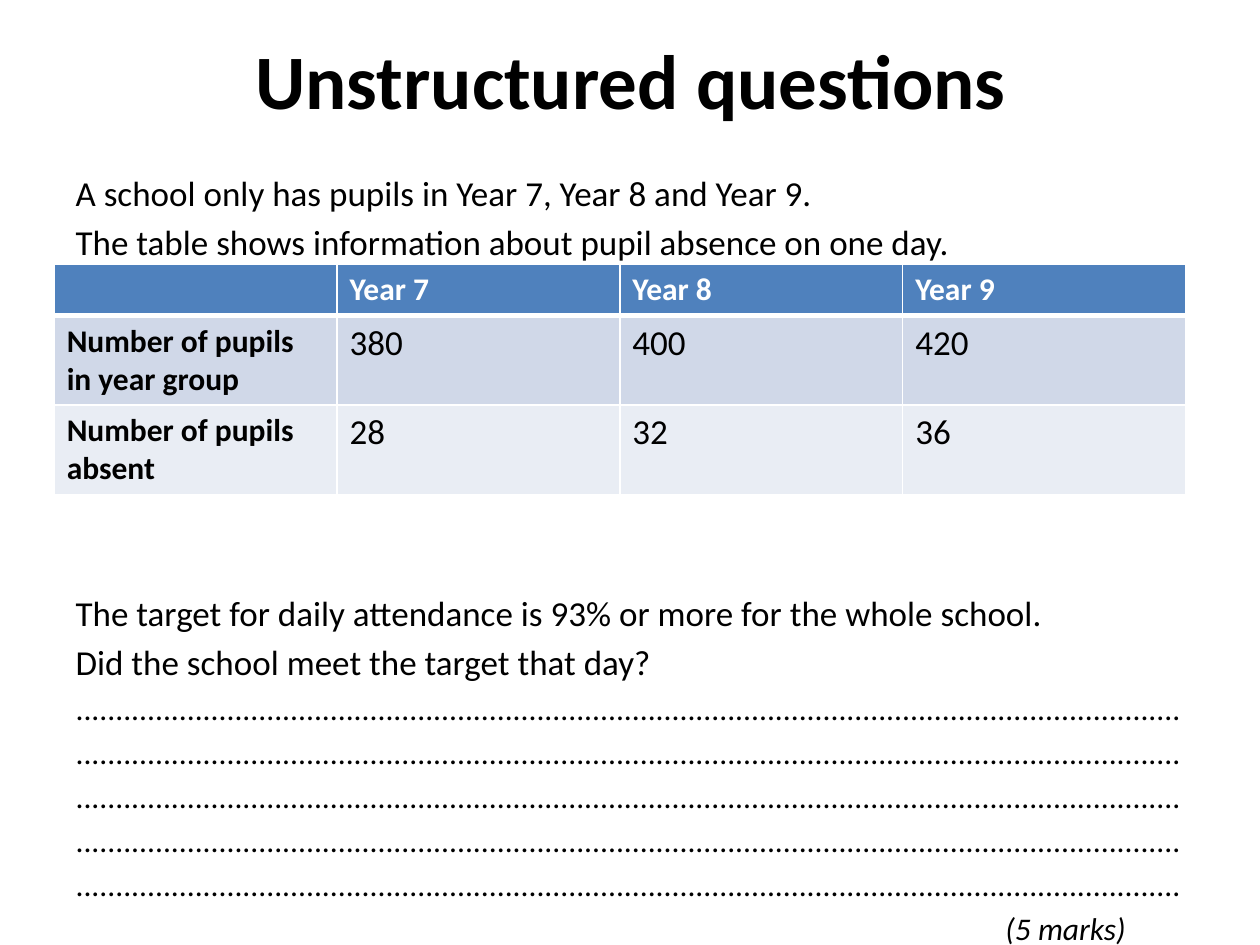
from dataclasses import dataclass

from lxml.etree import SubElement
from pptx import Presentation
from pptx.dml.color import RGBColor as Rgb
from pptx.enum.text import MSO_ANCHOR as Anchor, MSO_AUTO_SIZE as AutoSize, PP_ALIGN as Align
from pptx.oxml.ns import qn
from pptx.util import Inches, Pt


@dataclass(frozen=True)
class Theme:
    font: str = "Calibri"
    text: str = "000000"
    white: str = "FFFFFF"
    header: str = "4F81BD"
    bands: tuple = ("D0D8E8", "E9EDF4")
    title_size: int = 44
    body_size: int = 20
    small_size: int = 18
    thin_line: int = 1
    thick_line: int = 3


class SlideBuilder:
    def __init__(self, slide, theme):
        self.slide = slide
        self.theme = theme

    def format_font(self, font, size, color=None, **values):
        values = {"name": self.theme.font, "size": Pt(size), **values}
        for name, value in values.items():
            setattr(font, name, value)
        font.color.rgb = Rgb.from_string(color or self.theme.text)

    def place(self, shape, left, top, width, height):
        bounds = {"left": left, "top": top, "width": width, "height": height}
        for name, value in bounds.items():
            setattr(shape, name, Inches(value))

    def title(self, text, bounds):
        shape = self.slide.shapes.title
        self.place(shape, *bounds)
        frame = shape.text_frame
        frame.text = text
        frame.vertical_anchor = Anchor.MIDDLE
        frame.auto_size = AutoSize.NONE
        paragraph = frame.paragraphs[0]
        paragraph.alignment = Align.CENTER
        self.format_font(paragraph.runs[0].font, self.theme.title_size, bold=True)

    def body(self, lines, bounds):
        """Each line is (text, size, options); options are space, indent and italic."""
        shape = self.slide.placeholders[1]
        self.place(shape, *bounds)
        frame = shape.text_frame
        frame.text = "\n".join(text for text, _, _ in lines)
        frame.auto_size = AutoSize.NONE
        for paragraph, (_, size, options) in zip(frame.paragraphs, lines):
            paragraph.space_before = Pt(options.get("space", size * 0.2))
            indent = options.get("indent")
            properties = paragraph._p.get_or_add_pPr()
            properties.set("marL", str(Inches(0.38 if indent is None else indent)))
            properties.set("indent", str(Inches(-0.38 if indent is None else 0)))
            SubElement(properties, qn("a:buNone"))
            self.format_font(paragraph.runs[0].font, size, italic=options.get("italic", False))

    def cell_borders(self, cell, bottom_width):
        """Draw white borders; they must precede the fill in the cell properties."""
        properties = cell._tc.get_or_add_tcPr()
        thin = self.theme.thin_line
        widths = {"lnL": thin, "lnR": thin, "lnT": thin, "lnB": bottom_width}
        for tag, width in widths.items():
            line = SubElement(properties, qn(f"a:{tag}"), w=str(Pt(width)))
            fill = SubElement(line, qn("a:solidFill"))
            SubElement(fill, qn("a:srgbClr"), val=self.theme.white)

    def table(self, rows, bounds, row_heights):
        theme = self.theme
        lengths = [Inches(value) for value in bounds]
        table = self.slide.shapes.add_table(len(rows), len(rows[0]), *lengths).table
        for row, height in zip(table.rows, row_heights):
            row.height = Inches(height)
        fills = (theme.header, *theme.bands)
        for row_index, values in enumerate(rows):
            is_header = row_index == 0
            for column_index, value in enumerate(values):
                is_label = is_header or column_index == 0
                cell = table.cell(row_index, column_index)
                cell.text = value
                # The header's lower line is shared with the first row below it.
                self.cell_borders(cell, theme.thick_line if is_header else theme.thin_line)
                if row_index == 1:
                    cell._tc.tcPr.find(qn("a:lnT")).set("w", str(Pt(theme.thick_line)))
                cell.fill.solid()
                cell.fill.fore_color.rgb = Rgb.from_string(fills[row_index])
                for paragraph in cell.text_frame.paragraphs:
                    self.format_font(
                        paragraph.font,
                        theme.small_size if is_label else theme.body_size,
                        theme.white if is_header else theme.text,
                        bold=is_label,
                    )
                    for run in paragraph.runs:
                        self.format_font(
                            run.font,
                            theme.small_size if is_label else theme.body_size,
                            theme.white if is_header else theme.text,
                            bold=is_label,
                        )


def main():
    presentation = Presentation()
    presentation.slide_width, presentation.slide_height = Inches(10), Inches(7.5)
    slide = presentation.slides.add_slide(presentation.slide_layouts[1])
    theme = Theme()
    builder = SlideBuilder(slide, theme)

    builder.title("Unstructured questions", (0.51, 0, 9, 1.25))

    body_size, small_size = theme.body_size, theme.small_size
    answer_line = ("." * 139, small_size, {})
    builder.body(
        [
            ("A school only has pupils in Year 7, Year 8 and Year 9.", body_size, {}),
            ("The table shows information about pupil absence on one day.", body_size, {}),
            ("The target for daily attendance is 93% or more for the whole school.",
             body_size, {"space": 188}),
            ("Did the school meet the target that day?", body_size, {}),
            *[answer_line] * 5,
            ("(5 marks)", small_size, {"indent": 7.38, "italic": True}),
        ],
        (0.5, 1.31, 9, 5.39),
    )

    builder.table(
        [
            ("", "Year 7", "Year 8", "Year 9"),
            ("Number of pupils\nin year group", "380", "400", "420"),
            ("Number of pupils\nabsent", "28", "32", "36"),
        ],
        (0.43, 2.1, 8.98, 1.8),
        (0.4, 0.7, 0.7),
    )

    presentation.save("out.pptx")


if __name__ == "__main__":
    main()
